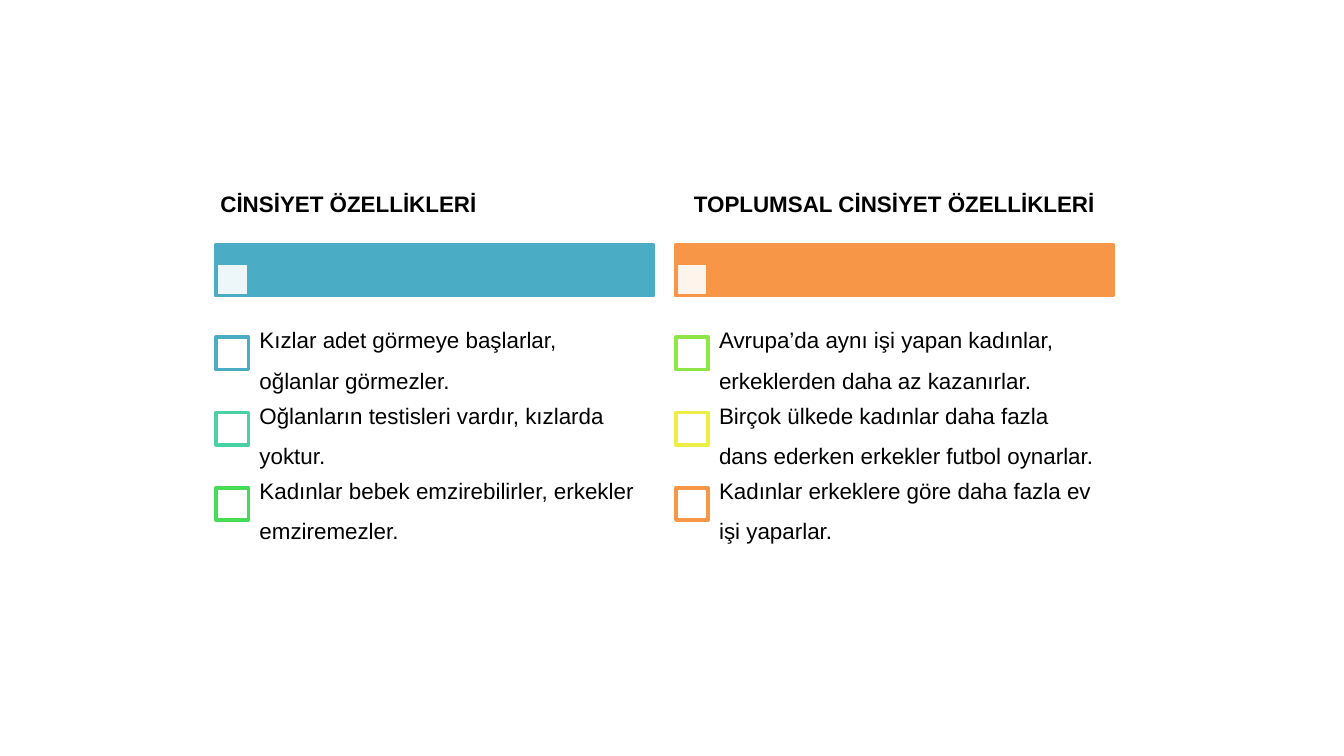
from lxml import etree
from pptx import Presentation
from pptx import util as u
from pptx.dml.color import RGBColor
from pptx.enum import shapes, text
from pptx.oxml.ns import qn

COLORS = {
    "black": "000000",
    "white": "FFFFFF",
    "blue": "4BACC6",
    "teal": "49D1A3",
    "green": "47DC57",
    "lime": "8DE646",
    "yellow": "EEEF46",
    "orange": "F79646",
}
WIDTH = 3.25   # column
SIDE = 0.24    # check box
PITCH = 0.56   # row

COLUMNS = [
    (1.61, "CİNSİYET ÖZELLİKLERİ", text.PP_ALIGN.LEFT, "blue", [
        ("blue", "Kızlar adet görmeye başlarlar, oğlanlar görmezler."),
        ("teal", "Oğlanların testisleri vardır, kızlarda yoktur."),
        ("green", "Kadınlar bebek emzirebilirler, erkekler emziremezler."),
    ]),
    (5.03, "TOPLUMSAL CİNSİYET ÖZELLİKLERİ", text.PP_ALIGN.CENTER, "orange", [
        ("lime", "Avrupa’da aynı işi yapan kadınlar, erkeklerden daha az kazanırlar."),
        ("yellow", "Birçok ülkede kadınlar daha fazla dans ederken erkekler futbol oynarlar."),
        ("orange", "Kadınlar erkeklere göre daha fazla ev işi yaparlar."),
    ]),
]


def color(name):
    return RGBColor.from_string(COLORS[name])


def write(shape, words, bold=False, align=text.PP_ALIGN.LEFT, pad=(0.09, 0.09)):
    """Fill a shape with one paragraph; pad is the side and the top inset."""
    frame = shape.text_frame
    frame.word_wrap = True
    frame.auto_size = text.MSO_AUTO_SIZE.NONE
    frame.vertical_anchor = text.MSO_ANCHOR.MIDDLE
    frame.margin_left = frame.margin_right = u.Inches(pad[0])
    frame.margin_top = frame.margin_bottom = u.Inches(pad[1])
    frame.text = words
    para = frame.paragraphs[0]
    para.alignment = align
    para.line_spacing = 1.5
    para.space_before = u.Pt(0)
    para.space_after = u.Pt(4.2)
    font = para.runs[0].font
    font.name, font.size, font.bold = "Arial", u.Pt(12), bold
    font.color.rgb = color("black")


def add_rect(slide, left, top, width, height, fill, line, alpha=None):
    rect = slide.shapes.add_shape(
        shapes.MSO_SHAPE.RECTANGLE,
        *map(u.Inches, (left, top, width, height)))
    rect.shadow.inherit = False
    rect.fill.solid()
    rect.fill.fore_color.rgb = color(fill)
    rect.line.color.rgb = color(line)
    rect.line.width = u.Pt(2)
    if alpha:
        tint = rect.fill._xPr.find(qn("a:solidFill"))[0]
        etree.SubElement(tint, qn("a:alpha"), val=str(alpha * 1000))


def add_head(holder, left, words, align):
    holder.left, holder.top = u.Inches(left), u.Inches(1.12)
    holder.width, holder.height = u.Inches(WIDTH), u.Inches(0.69)
    write(holder, words, bold=True, align=align, pad=(0.03, 0.02))


def add_bar(slide, left, hue):
    add_rect(slide, left, 1.82, WIDTH, 0.38, hue, hue)
    add_rect(slide, left, 1.96, SIDE, SIDE, "white", hue, alpha=90)


def add_item(slide, left, top, hue, words):
    add_rect(slide, left, top + 0.16, SIDE, SIDE, "white", hue)
    box = slide.shapes.add_textbox(
        *map(u.Inches, (left + 0.23, top, WIDTH - 0.23, PITCH)))
    write(box, words)


def main():
    deck = Presentation()
    deck.slide_width, deck.slide_height = u.Inches(10), u.Inches(10 * 9 / 16)
    slide = deck.slides.add_slide(deck.slide_layouts.get_by_name("Comparison"))
    title, head1, list1, head2, list2 = slide.placeholders
    for spare in (title, list1, list2):
        spare.element.getparent().remove(spare.element)

    for holder, column in zip((head1, head2), COLUMNS):
        left, words, align, hue, items = column
        add_head(holder, left, words, align)
        add_bar(slide, left, hue)
        for row, (tint, item) in enumerate(items):
            add_item(slide, left, 2.35 + row * PITCH, tint, item)
    deck.save("out.pptx")


if __name__ == "__main__":
    main()
